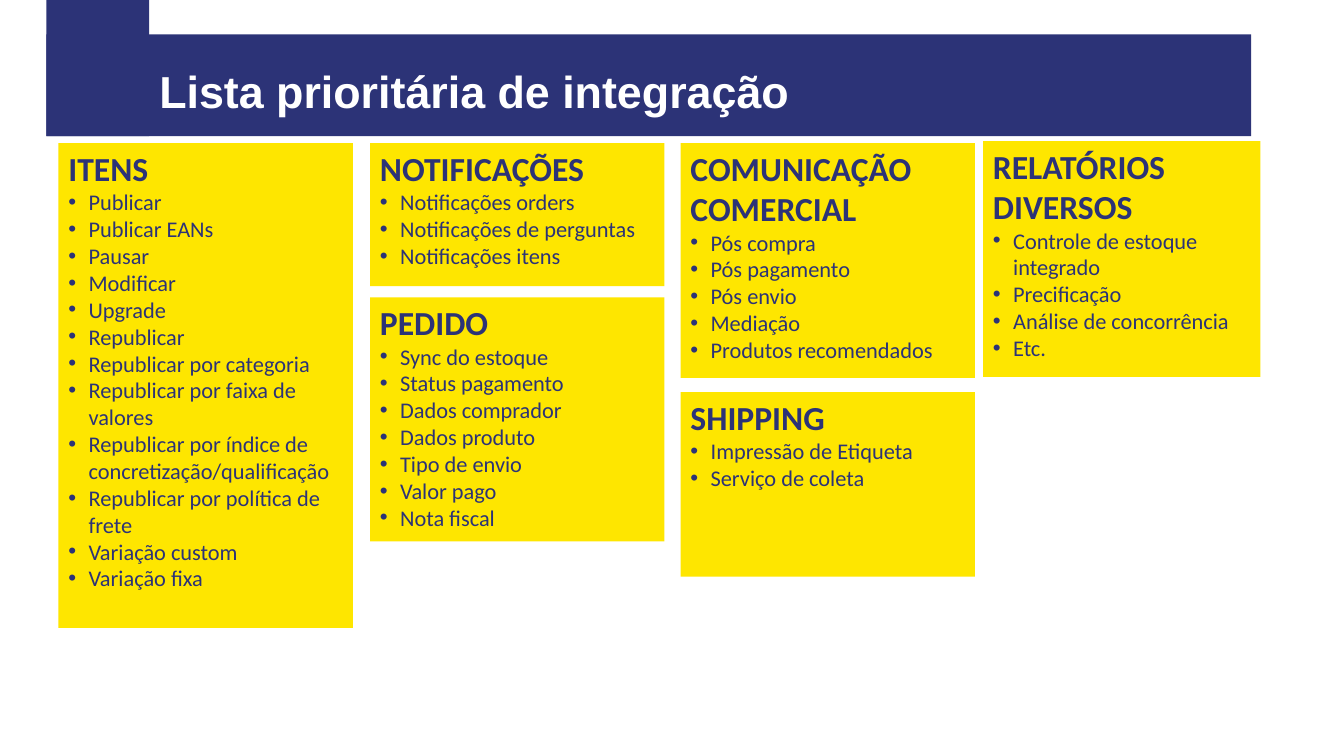
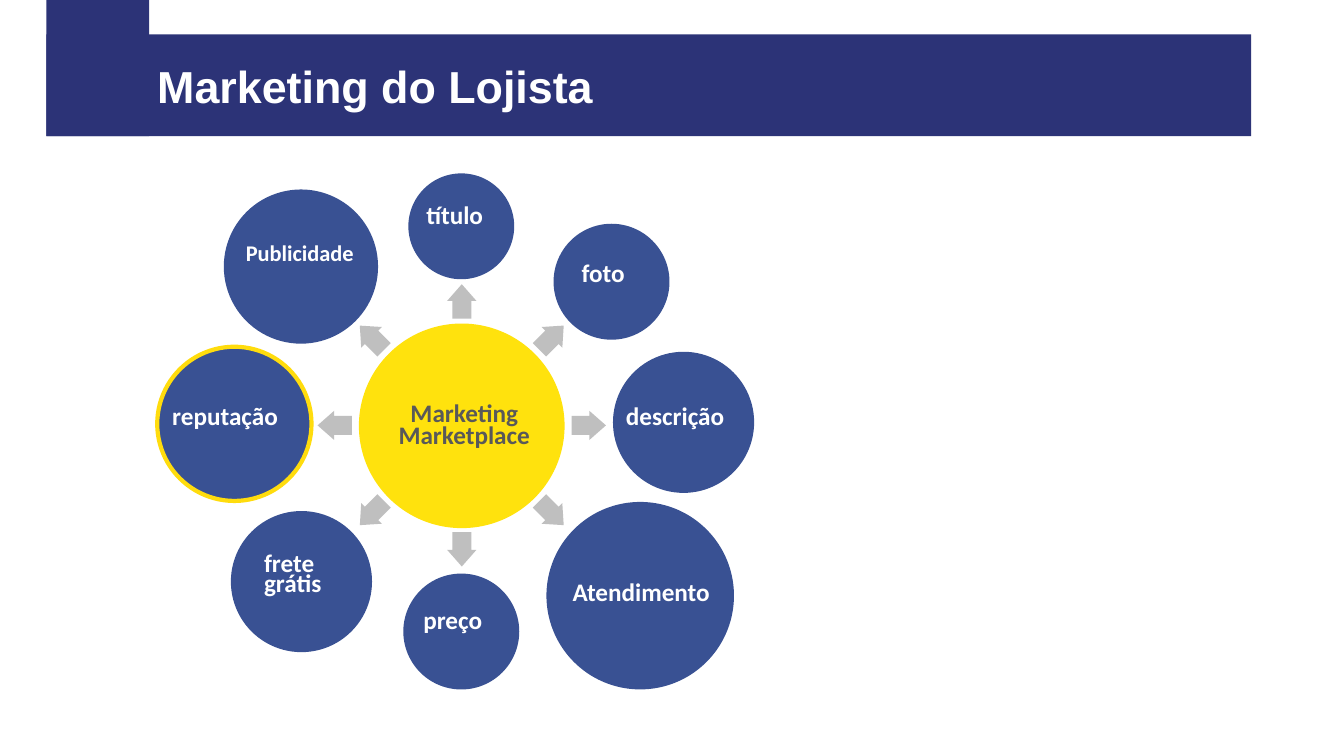
"""Build two slides: an integration list and a marketing wheel."""
from math import cos, radians, sin

from lxml.etree import SubElement
from pptx import Presentation
from pptx.dml.color import RGBColor
from pptx.enum.shapes import MSO_SHAPE
from pptx.enum.text import MSO_ANCHOR, PP_ALIGN
from pptx.oxml.ns import qn
from pptx.util import Inches, Pt

NAVY = RGBColor(0x2C, 0x33, 0x77)
BLUE = RGBColor(0x39, 0x51, 0x93)
LEMON = RGBColor(0xFE, 0xE6, 0x00)
SUN = RGBColor(0xFF, 0xE2, 0x0D)
GOLD = RGBColor(0xFF, 0xDC, 0x0D)
GREY = RGBColor(0x59, 0x59, 0x59)
SILVER = RGBColor(0xBF, 0xBF, 0xBF)
WHITE = RGBColor(0xFF, 0xFF, 0xFF)

BANDS = [(0.46, 0, 1.02, 1.35), (0.46, 0.34, 11.95, 1.01)]
INDENT = Inches(0.2)

CARDS = [
    ((0.58, 1.42, 2.92, 4.81), "ITENS", [
        "Publicar", "Publicar EANs", "Pausar", "Modificar", "Upgrade",
        "Republicar", "Republicar por categoria",
        "Republicar por faixa de valores",
        "Republicar por índice de concretização/qualificação",
        "Republicar por política de frete",
        "Variação custom", "Variação fixa"]),
    ((3.67, 1.42, 2.92, 1.42), "NOTIFICAÇÕES", [
        "Notificações orders", "Notificações de perguntas",
        "Notificações itens"]),
    ((3.67, 2.95, 2.92, 2.42), "PEDIDO", [
        "Sync do estoque", "Status pagamento", "Dados comprador",
        "Dados produto", "Tipo de envio", "Valor pago", "Nota fiscal"]),
    ((6.75, 1.42, 2.92, 2.33), "COMUNICAÇÃO COMERCIAL", [
        "Pós compra", "Pós pagamento", "Pós envio", "Mediação",
        "Produtos recomendados"]),
    ((6.75, 3.89, 2.92, 1.83), "SHIPPING", [
        "Impressão de Etiqueta", "Serviço de coleta"]),
    ((9.75, 1.4, 2.75, 2.34), "RELATÓRIOS DIVERSOS", [
        "Controle de estoque integrado", "Precificação",
        "Análise de concorrência", "Etc."]),
]

HUB = (3.56, 3.21, 2.04, 2.03)
MID = (4.58, 4.22)
REACH = (1.26, 1.23)
ARROW = (0.29, 0.34)

BUBBLES = [
    ("Publicidade", (2.22, 1.88, 1.53), (2.34, 2.45, 1.35, 0.24), {"size": 16}),
    ("título", (4.05, 1.72, 1.05), (4.13, 2.09, 1.12, 0.22), {}),
    ("foto", (5.49, 2.22, 1.15), (5.67, 2.66, 1.12, 0.22), {}),
    ("descrição", (6.08, 3.49, 1.4), (6.11, 4.08, 1.58, 0.22), {}),
    ("Atendimento", (5.42, 4.98, 1.86), (5.58, 5.77, 1.69, 0.31), {"lead": 14}),
    ("preço", (4, 5.69, 1.15), (4.1, 6.11, 1.12, 0.22), {}),
    ("frete grátis", (2.29, 5.07, 1.4), (2.52, 5.49, 1.12, 0.46), {"lead": 14}),
    ("reputação", (1.56, 3.44, 1.53), (1.61, 4.08, 1.47, 0.22), {}),
]


def put(frame, text, size=18, color=WHITE, bold=True, name="Calibri",
        align=PP_ALIGN.LEFT, lead=None, bullet=False):
    """Add one formatted paragraph to a text frame."""
    para = frame.paragraphs[0]
    if para.runs:
        para = frame.add_paragraph()
    para.alignment = align
    if lead:
        para.line_spacing = Pt(lead)
    if bullet:
        props = para._p.get_or_add_pPr()
        props.set("marL", str(INDENT))
        props.set("indent", str(-INDENT))
        SubElement(props, qn("a:buFont")).set("typeface", "Arial")
        SubElement(props, qn("a:buChar")).set("char", "•")
    run = para.add_run()
    run.text = text
    font = run.font
    font.name, font.size, font.bold = name, Pt(size), bold
    font.color.rgb = color


def shape(slide, kind, place, fill, line=None):
    """Draw a filled preset shape."""
    item = slide.shapes.add_shape(kind, *map(Inches, place))
    item.shadow.inherit = False
    item.fill.solid()
    item.fill.fore_color.rgb = fill
    if line:
        item.line.color.rgb = line
        item.line.width = Pt(3)
    else:
        item.line.fill.background()
    return item


def box(slide, place):
    """Add a wrapping text box and return its frame."""
    frame = slide.shapes.add_textbox(*map(Inches, place)).text_frame
    frame.word_wrap = True
    return frame


def page(deck, title, place):
    """Add a slide with the navy bands and a title."""
    slide = deck.slides.add_slide(deck.slide_layouts[6])
    for band in BANDS:
        shape(slide, MSO_SHAPE.RECTANGLE, band, NAVY)
    frame = box(slide, place)
    frame.margin_left = frame.margin_right = frame.margin_bottom = 0
    frame.margin_top = Inches(0.05)
    put(frame, title, size=32, name="Arial")
    return slide


def card(slide, place, head, items):
    """Draw a yellow card with a heading and bullets."""
    frame = shape(slide, MSO_SHAPE.RECTANGLE, place, LEMON).text_frame
    frame.word_wrap = True
    frame.vertical_anchor = MSO_ANCHOR.TOP
    put(frame, head, size=24, color=NAVY)
    for item in items:
        put(frame, item, size=16, color=NAVY, bold=False, bullet=True)


def arrow(slide, angle):
    """Draw an arrow that points away from the hub."""
    wide, high = ARROW
    left = MID[0] + REACH[0] * sin(radians(angle)) - wide / 2
    top = MID[1] - REACH[1] * cos(radians(angle)) - high / 2
    item = shape(slide, MSO_SHAPE.UP_ARROW, (left, top, wide, high), SILVER)
    item.adjustments[0] = 0.648
    item.adjustments[1] = 0.569
    item.rotation = angle


def bubble(slide, text, disc, place, style):
    """Draw a blue disc with its label."""
    left, top, size = disc
    line = GOLD if text == "reputação" else None
    shape(slide, MSO_SHAPE.OVAL, (left, top, size, size), BLUE, line)
    put(box(slide, place), text, **{"lead": 10, **style})


def wheel(slide):
    """Draw the hub, its arrows and its bubbles."""
    shape(slide, MSO_SHAPE.OVAL, HUB, SUN)
    for args in BUBBLES:
        bubble(slide, *args)
    for angle in range(0, 360, 45):
        arrow(slide, angle)
    frame = box(slide, (3.6, 3.97, 2.01, 0.52))
    for word in ("Marketing", "Marketplace"):
        put(frame, word, color=GREY, align=PP_ALIGN.CENTER, lead=16)


def main():
    """Build and save the deck."""
    deck = Presentation()
    deck.slide_width, deck.slide_height = Inches(13.33), Inches(7.5)
    slide = page(deck, "Lista prioritária de integração",
                 (1.58, 0.58, 8.58, 0.47))
    for args in CARDS:
        card(slide, *args)
    wheel(page(deck, "Marketing do Lojista", (1.56, 0.53, 11.67, 0.47)))
    deck.save("out.pptx")


if __name__ == "__main__":
    main()
